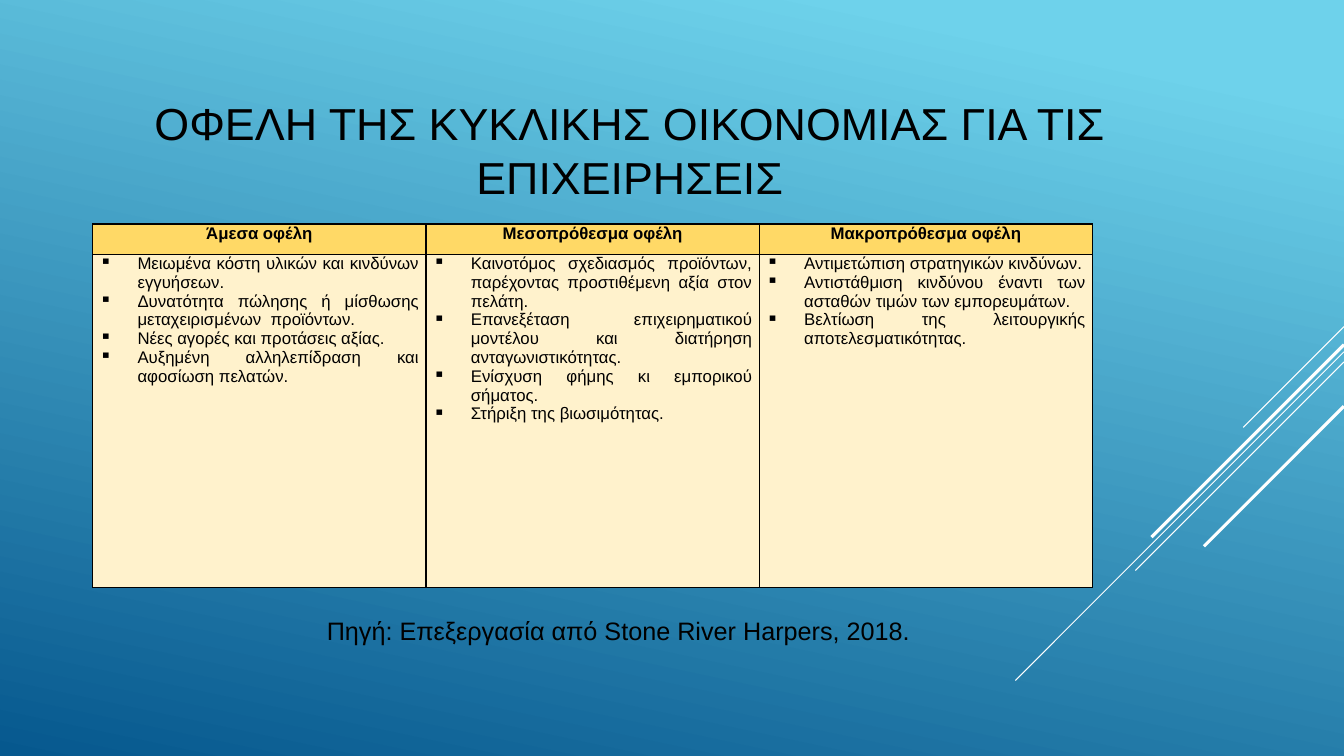
from pptx import Presentation
from pptx.dml.color import RGBColor as Rgb
from pptx.enum.shapes import MSO_CONNECTOR as Conn
from pptx.enum.text import MSO_ANCHOR as Anchor, PP_ALIGN as Align
from pptx.oxml import parse_xml
from pptx.oxml.ns import nsdecls
from pptx.util import Pt

HUES = {
    "ink": "000000", "line": "FFFFFF", "sky": "6ED2EB", "sea": "06588E",
    "head": "FFD966", "cell": "FFF2CC",
}
TITLE = "ΟΦΕΛΗ ΤΗΣ ΚΥΚΛΙΚΗΣ ΟΙΚΟΝΟΜΙΑΣ ΓΙΑ ΤΙΣ ΕΠΙΧΕΙΡΗΣΕΙΣ"
SOURCE = "Πηγή: Επεξεργασία από Stone River Harpers, 2018."
GAINS = {
    "Άμεσα οφέλη": [
        "Μειωμένα κόστη υλικών και κινδύνων εγγυήσεων.",
        "Δυνατότητα πώλησης ή μίσθωσης μεταχειρισμένων  προϊόντων.",
        "Νέες αγορές και προτάσεις αξίας.",
        "Αυξημένη αλληλεπίδραση και αφοσίωση πελατών.",
    ],
    "Μεσοπρόθεσμα οφέλη": [
        "Καινοτόμος σχεδιασμός προϊόντων, παρέχοντας προστιθέμενη αξία στον πελάτη.",
        "Επανεξέταση επιχειρηματικού μοντέλου και διατήρηση ανταγωνιστικότητας.",
        "Ενίσχυση φήμης κι εμπορικού σήματος.",
        "Στήριξη της βιωσιμότητας.",
    ],
    "Μακροπρόθεσμα οφέλη": [
        "Αντιμετώπιση στρατηγικών κινδύνων.",
        "Αντιστάθμιση κινδύνου έναντι των ασταθών τιμών των εμπορευμάτων.",
        "Βελτίωση της λειτουργικής αποτελεσματικότητας.",
    ],
}
RAYS = [
    (233.3, 72, 0.75), (251.3, 234.7, 0.75), (258.5, 149, 0.75),
    (246.2, 137.5, 2.25), (290.2, 100, 2.25),
]
WIDE, HIGH = 960, 540


def tint(name):
    return Rgb.from_string(HUES[name])


def apply(item, look):
    for key, value in look.items():
        setattr(item, key, value)


def write(frame, texts, size, align, bold=False):
    for i, text in enumerate(texts):
        para = frame.paragraphs[0] if i == 0 else frame.add_paragraph()
        para.alignment = align
        run = para.add_run()
        run.text = text
        apply(run.font, {"name": "Arial", "size": Pt(size), "bold": bold})
        run.font.color.rgb = tint("ink")


def paint(slide):
    fill = slide.background.fill
    fill.gradient()
    fill.gradient_angle = 258
    for stop, spot, name in zip(fill.gradient_stops, (0.1, 1), ("sky", "sea")):
        stop.position = spot
        stop.color.rgb = tint(name)


def add_ray(slide, top, span, width):
    ray = slide.shapes.add_connector(
        Conn.STRAIGHT, Pt(WIDE), Pt(top), Pt(WIDE - span), Pt(top + span))
    ray.line.width = Pt(width)
    ray.line.color.rgb = tint("line")
    ray._element.spPr.append(parse_xml(f"<a:effectLst {nsdecls('a')}/>"))


def add_text(slide, text, size, box):
    frame = slide.shapes.add_textbox(*map(Pt, box)).text_frame
    apply(frame, {"word_wrap": True, "vertical_anchor": Anchor.MIDDLE})
    write(frame, [text], size, Align.CENTER)


def add_edges(cell):
    props = cell._tc.get_or_add_tcPr()
    for i, side in enumerate(("lnL", "lnR", "lnT", "lnB")):
        props.insert(i, parse_xml(
            f'<a:{side} {nsdecls("a")} w="12700"><a:solidFill>'
            f'<a:srgbClr val="{HUES["ink"]}"/></a:solidFill></a:{side}>'))


def add_marks(frame):
    for para in frame.paragraphs:
        props = para._p.get_or_add_pPr()
        props.set("marL", str(Pt(27)))
        props.set("indent", str(-Pt(27)))
        props.append(parse_xml(f'<a:buChar {nsdecls("a")} char="▪"/>'))


def fill_cell(cell, texts, hue, align, bold=False):
    apply(cell, {
        "margin_left": Pt(5), "margin_right": Pt(5),
        "margin_top": 0, "margin_bottom": 0,
    })
    cell.fill.solid()
    cell.fill.fore_color.rgb = tint(hue)
    add_edges(cell)
    write(cell.text_frame, texts, 12, align, bold)


def add_gains(slide):
    rows = (21.6, 238.3)
    table = slide.shapes.add_table(
        2, len(GAINS), Pt(66.25), Pt(160), Pt(714.3), Pt(sum(rows))).table
    for row, high in zip(table.rows, rows):
        row.height = Pt(high)
    for i, (head, items) in enumerate(GAINS.items()):
        table.columns[i].width = Pt(238.1)
        fill_cell(table.cell(0, i), [head], "head", Align.CENTER, True)
        body = table.cell(1, i)
        fill_cell(body, items, "cell", Align.JUSTIFY)
        add_marks(body.text_frame)


def main():
    deck = Presentation()
    apply(deck, {"slide_width": Pt(WIDE), "slide_height": Pt(HIGH)})
    slide = deck.slides.add_slide(deck.slide_layouts[6])
    paint(slide)
    for ray in RAYS:
        add_ray(slide, *ray)
    add_text(slide, TITLE, 32, (54, 54, 792, 106))
    add_text(slide, SOURCE, 18, (54, 432, 775.5, 36))
    add_gains(slide)
    deck.save("out.pptx")


if __name__ == "__main__":
    main()
